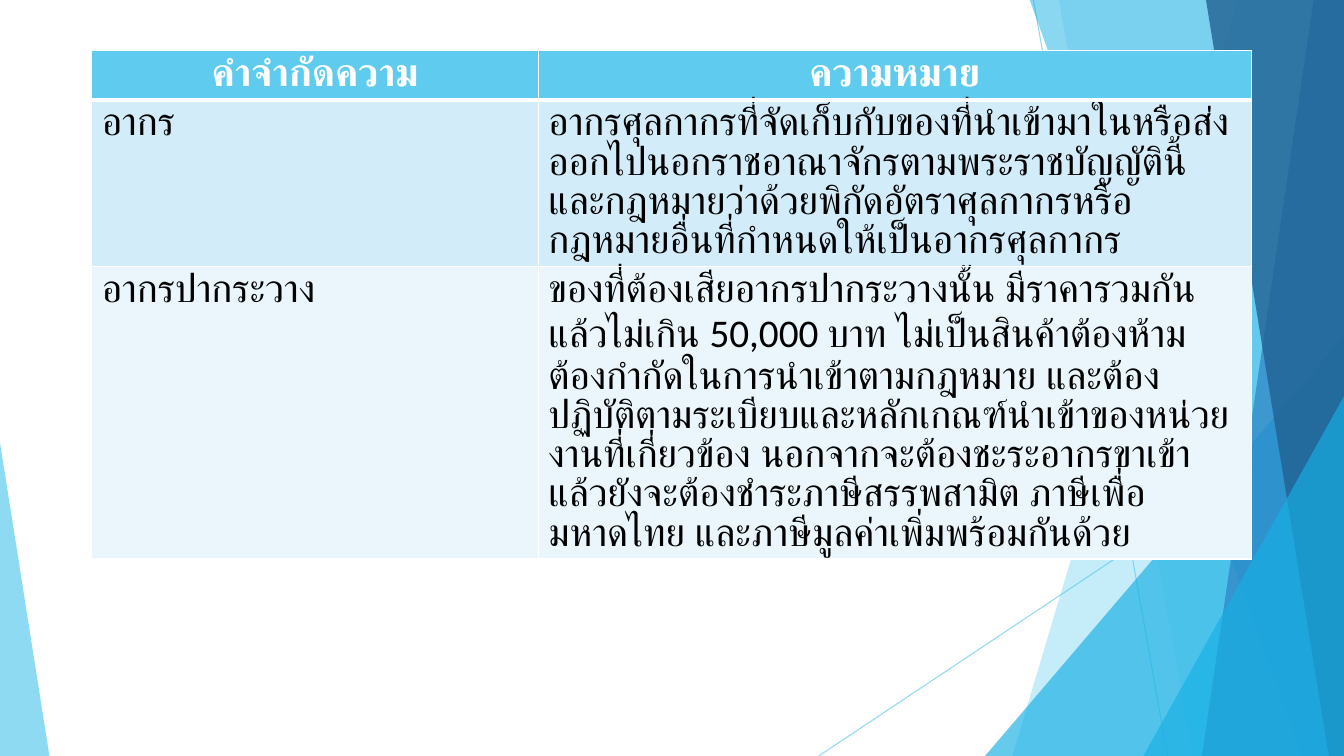
import pptx
import pptx.util
import pptx.dml.color
import pptx.enum.dml
import pptx.enum.lang
import pptx.enum.shapes
import pptx.enum.text
import pptx.oxml
import pptx.oxml.ns
from dataclasses import dataclass

Inches = pptx.util.Inches


@dataclass(frozen=True)
class Theme:
    sky: str = "5FCBEF"
    cyan: str = "17B0E4"
    blue: str = "2E83C3"
    navy: str = "226292"
    white: str = "FFFFFF"
    black: str = "000000"
    bands: tuple = ("D2ECF9", "EAF6FC")
    font: str = "Calibri"
    size: int = 28
    hairline: float = 0.75
    border: int = 1
    header_border: int = 3


THEME = Theme()
WIDTH, HEIGHT = 13.33, 7.5

HEADINGS = ("คำจำกัดความ", "ความหมาย")
DEFINITIONS = (
    ("อากร",
     "อากรศุลกากรที่จัดเก็บกับของที่นำเข้ามาในหรือส่งออกไปนอกราชอาณาจักร"
     "ตามพระราชบัญญัตินี้และกฎหมายว่าด้วยพิกัดอัตราศุลกากรหรือ"
     "กฎหมายอื่นที่กำหนดให้เป็นอากรศุลกากร"),
    ("อากรปากระวาง",
     "ของที่ต้องเสียอากรปากระวางนั้น มีราคารวมกันแล้วไม่เกิน 50,000 บาท "
     "ไม่เป็นสินค้าต้องห้าม ต้องกำกัดในการนำเข้าตามกฎหมาย "
     "และต้องปฏิบัติตามระเบียบและหลักเกณฑ์นำเข้าของหน่วยงานที่เกี่ยวข้อง "
     "นอกจากจะต้องชะระอากรขาเข้าแล้วยังจะต้องชำระภาษีสรรพสามิต "
     "ภาษีเพื่อมหาดไทย และภาษีมูลค่าเพิ่มพร้อมกันด้วย"),
)


def rgb(color):
    return pptx.dml.color.RGBColor.from_string(color)


def set_alpha(properties, percent):
    for color in properties.iter(pptx.oxml.ns.qn("a:srgbClr")):
        alpha = pptx.oxml.parse_xml(
            f'<a:alpha {pptx.oxml.ns.nsdecls("a")} val="{percent * 1000}"/>')
        color.append(alpha)


def tint(facet, color, percent):
    facet.shadow.inherit = False
    facet.fill.solid()
    facet.fill.fore_color.rgb = rgb(color)
    facet.line.fill.background()
    set_alpha(facet._element.spPr, percent)


def add_ray(slide, start, end):
    ray = slide.shapes.add_connector(
        pptx.enum.shapes.MSO_CONNECTOR.STRAIGHT,
        *(Inches(value) for value in start + end))
    ray.line.color.rgb = rgb(THEME.sky)
    ray.line.width = pptx.util.Pt(THEME.hairline)
    properties = ray._element.spPr
    set_alpha(properties, 70)
    properties.append(pptx.oxml.parse_xml(
        f'<a:effectLst {pptx.oxml.ns.nsdecls("a")}/>'))


def add_ribbon(slide, top_x, bottom_x, right, bottom, color, percent):
    top = -0.01
    corners = [(Inches(x), Inches(y)) for x, y in (
        (top_x, top), (right, top), (right, bottom), (bottom_x, bottom))]
    outline = slide.shapes.build_freeform(*corners[0])
    outline.add_line_segments(corners[1:], close=True)
    tint(outline.convert_to_shape(), color, percent)


def add_wedge(slide, left, top, width, bottom, apex, color, percent):
    wedge = slide.shapes.add_shape(
        pptx.enum.shapes.MSO_SHAPE.ISOSCELES_TRIANGLE,
        Inches(left), Inches(top), Inches(width), Inches(bottom - top))
    wedge.adjustments[0] = apex
    tint(wedge, color, percent)


def add_backdrop(slide, left, top, width, height):
    right, bottom = left + width, top + height
    add_ray(slide, (10.25, top), (11.58, bottom))
    add_ray(slide, (right, 4.03), (8.12, bottom))
    add_ribbon(slide, 12.28, 10.04, right, bottom, THEME.sky, 36)
    add_ribbon(slide, 10.5, 11.83, right, bottom, THEME.sky, 20)
    add_wedge(slide, right - 3.56, 3.33, 3.56, bottom, 1, THEME.cyan, 66)
    add_ribbon(slide, 10.21, 12.91, right, bottom, THEME.cyan, 50)
    add_ribbon(slide, 13.03, 11.92, right, bottom, THEME.blue, 70)
    add_ribbon(slide, 11.96, 13.18, right, bottom, THEME.navy, 80)
    add_wedge(slide, right - 1.99, 3.93, 1.99, bottom, 1, THEME.cyan, 66)
    add_wedge(slide, left, 4.39, 0.49, bottom, 0, THEME.sky, 70)


def set_borders(cell, bottom_width):
    properties = cell._tc.get_or_add_tcPr()
    widths = {"lnL": THEME.border, "lnR": THEME.border,
              "lnT": THEME.border, "lnB": bottom_width}
    for position, (side, width) in enumerate(widths.items()):
        properties.insert(position, pptx.oxml.parse_xml(
            f'<a:{side} {pptx.oxml.ns.nsdecls("a")} w="{pptx.util.Pt(width)}">'
            f'<a:solidFill><a:srgbClr val="{THEME.white}"/></a:solidFill>'
            f'</a:{side}>'))


def fill_cell(cell, wording, fill, color, bold, align, bottom_width):
    cell.fill.solid()
    cell.fill.fore_color.rgb = rgb(fill)
    paragraph = cell.text_frame.paragraphs[0]
    paragraph.alignment = align
    run = paragraph.add_run()
    run.text = wording
    formats = {"name": THEME.font, "size": pptx.util.Pt(THEME.size),
               "bold": bold, "language_id": pptx.enum.lang.MSO_LANGUAGE_ID.THAI}
    for attribute, value in formats.items():
        setattr(run.font, attribute, value)
    run.font.color.rgb = rgb(color)
    set_borders(cell, bottom_width)


def add_definitions(slide, left, top, width, height):
    column_widths = (4.43, width - 4.43)
    row_heights = (0.48, 1.64, height - 2.12)
    definitions = slide.shapes.add_table(
        len(row_heights), len(column_widths),
        Inches(left), Inches(top), Inches(width), Inches(height)).table
    for column, column_width in zip(definitions.columns, column_widths):
        column.width = Inches(column_width)
    for row, row_height in zip(definitions.rows, row_heights):
        row.height = Inches(row_height)
    align = pptx.enum.text.PP_ALIGN
    for index, wordings in enumerate((HEADINGS,) + DEFINITIONS):
        if index == 0:
            style = (THEME.sky, THEME.white, True, align.CENTER,
                     THEME.header_border)
        else:
            style = (THEME.bands[index - 1], THEME.black, False, align.LEFT,
                     THEME.border)
        for cell, wording in zip(definitions.rows[index].cells, wordings):
            fill_cell(cell, wording, *style)


def main():
    deck = pptx.Presentation()
    deck.slide_width, deck.slide_height = Inches(WIDTH), Inches(HEIGHT)
    slide = deck.slides.add_slide(deck.slide_layouts.get_by_name("Blank"))
    add_backdrop(slide, 0, 0, WIDTH, HEIGHT)
    add_definitions(slide, 0.91, 0.5, 11.5, 5.02)
    deck.save("out.pptx")


if __name__ == "__main__":
    main()
